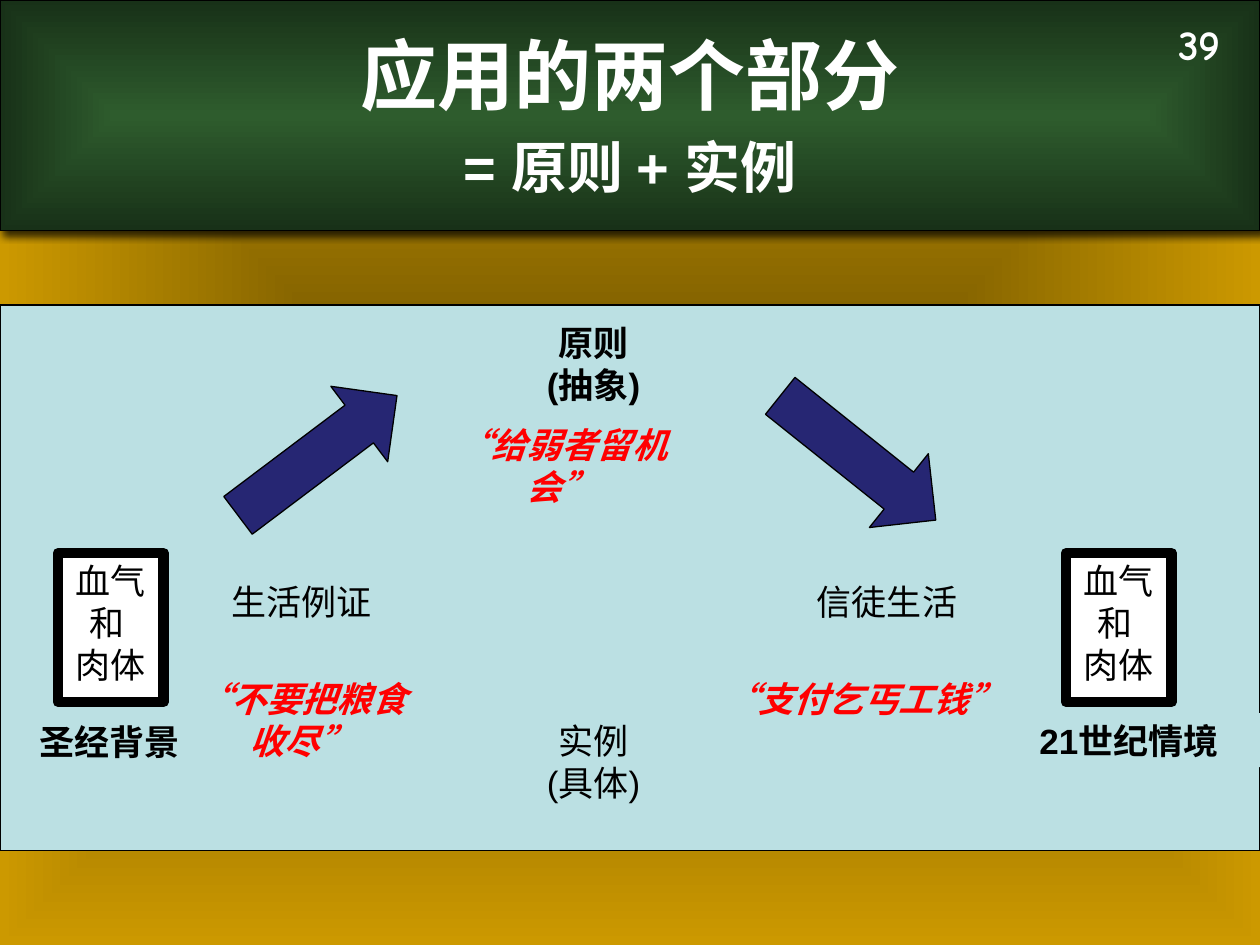
from lxml.etree import SubElement
from pptx import Presentation
from pptx.dml.color import RGBColor
from pptx.enum.shapes import MSO_SHAPE
from pptx.enum.text import MSO_ANCHOR, MSO_AUTO_SIZE, PP_ALIGN
from pptx.oxml.ns import qn
from pptx.util import Inches, Pt

BLACK = RGBColor(0, 0, 0)
WHITE = RGBColor(255, 255, 255)
RED = RGBColor(255, 0, 0)
PALE_BLUE = RGBColor(0xBB, 0xE0, 0xE3)
NAVY = RGBColor(0x26, 0x26, 0x73)
BROWN = RGBColor(0x5E, 0x47, 0x00)
GOLD = RGBColor(0xCC, 0x99, 0x00)
GREEN = RGBColor(0x2E, 0x5C, 0x2D)
DARK_GREEN = RGBColor(0x18, 0x31, 0x18)

# left, top, width, height, text, colour, bold, italic
LABELS = [
    (0.08, 5.67, 1.58, 0.44, "圣经背景", BLACK, True, False),
    (7.92, 5.66, 2.08, 0.43, "21世纪情境", BLACK, True, False),
    (3.92, 5.66, 1.58, 0.77, "实例\n(具体)", BLACK, False, False),
    (1.6, 4.56, 1.58, 0.44, "生活例证", BLACK, False, False),
    (6, 4.56, 2.08, 0.44, "信徒生活", BLACK, False, False),
    (3.67, 2.5, 2.08, 0.77, "原则\n(抽象)", BLACK, True, False),
    (1.45, 5.33, 1.89, 0.77, "“不要把粮食收尽”", RED, True, True),
    (5.63, 5.33, 2.45, 0.43, "“支付乞丐工钱”", RED, True, True),
    (3.27, 3.31, 2.38, 0.43, "“给弱者留机会”", RED, True, True),
]


def fill_from_centre(fill, element, inner, outer):
    """Gradient that runs from the middle out to the edges of the shape."""
    fill.gradient()
    for stop, color in zip(fill.gradient_stops, (inner, outer)):
        stop.color.rgb = color
    grad = next(element.iter(qn("a:gradFill")))
    grad.remove(grad.find(qn("a:lin")))
    centre = SubElement(grad, qn("a:path"), path="shape")
    SubElement(centre, qn("a:fillToRect"), l="50000", t="50000", r="50000", b="50000")


def add_shadow(effects, blur, dist, alpha):
    shadow = SubElement(effects, qn("a:outerShdw"), blurRad=str(Pt(blur)),
                        dist=str(Pt(dist)), dir="2700000", algn="tl", rotWithShape="0")
    color = SubElement(shadow, qn("a:srgbClr"), val="000000")
    SubElement(color, qn("a:alpha"), val=str(alpha * 1000))


def add_block(slide, box, fill, line=None, kind=MSO_SHAPE.RECTANGLE):
    sp = slide.shapes.add_shape(kind, *map(Inches, box))
    sp.shadow.inherit = False
    if fill is not None:
        sp.fill.solid()
        sp.fill.fore_color.rgb = fill
    if line is None:
        sp.line.fill.background()
    else:
        sp.line.color.rgb = BLACK
        sp.line.width = Pt(line)
    return sp


def write(sp, text, size=20, color=BLACK, bold=False, italic=False,
          font="Arial", wrap=True, shadow=False):
    tf = sp.text_frame
    tf.word_wrap = wrap
    tf.auto_size = MSO_AUTO_SIZE.SHAPE_TO_FIT_TEXT
    tf.vertical_anchor = MSO_ANCHOR.TOP
    p = tf.paragraphs[0]
    p.alignment = PP_ALIGN.CENTER
    for i, part in enumerate(text.split("\n")):
        if i:
            p.add_line_break()
        r = p.add_run()
        r.text = part
        r.font.size = Pt(size)
        r.font.name = font
        r.font.bold = bold
        r.font.italic = italic
        r.font.color.rgb = color
        if shadow:
            rPr = r.font.fill and r._r.get_or_add_rPr()
            effects = SubElement(rPr, qn("a:effectLst"))
            rPr.find(qn("a:solidFill")).addnext(effects)
            add_shadow(effects, 3, 3, 60)


def add_banner(slide):
    sp = add_block(slide, (0, 0, 10, 1.83), None, 0.75)
    fill_from_centre(sp.fill, sp.element, GREEN, DARK_GREEN)
    add_shadow(next(sp.element.iter(qn("a:effectLst"))), 5, 3, 75)


def add_title(slide):
    title = slide.shapes.title
    title.left, title.top, title.width, title.height = map(Inches, (0.75, 0.17, 8.5, 0.83))
    write(title, "应用的两个部分", 44, WHITE, bold=True, shadow=True)
    # Bring the title in front of the banner
    slide.shapes.element.append(title.element)


def add_text(slide, box, text, size, **style):
    write(slide.shapes.add_textbox(*map(Inches, box)), text, size, WHITE, bold=True, **style)


def add_arrow(slide, left, top, angle):
    sp = add_block(slide, (left, top, 1.58, 0.75), NAVY, 0.75, MSO_SHAPE.RIGHT_ARROW)
    sp.rotation = angle


def main():
    prs = Presentation()
    prs.slide_width, prs.slide_height = Inches(10), Inches(7.5)
    slide = prs.slides.add_slide(prs.slide_layouts[5])
    fill_from_centre(slide.background.fill, slide.element, BROWN, GOLD)

    add_block(slide, (0, 2.42, 10, 4.33), PALE_BLUE, 0.75)
    add_banner(slide)
    add_title(slide)
    add_text(slide, (0.75, 1, 8.5, 0.63), "= 原则 + 实例", 32, shadow=True)
    add_text(slide, (9.22, 0.1, 0.6, 0.5), "39", 24, font="Comic Neue", wrap=False)

    for *box, text, color, bold, italic in LABELS:
        write(add_block(slide, box, PALE_BLUE), text, color=color, bold=bold, italic=italic)
    for left in (0.46, 8.46):
        sp = add_block(slide, (left, 4.39, 0.84, 1.18), WHITE, 6)
        write(sp, "血气\n和 \n肉体", wrap=False)
    add_arrow(slide, 1.73, 3.24, 323)
    add_arrow(slide, 6.02, 3.26, 38.6)

    prs.save("out.pptx")


if __name__ == "__main__":
    main()
